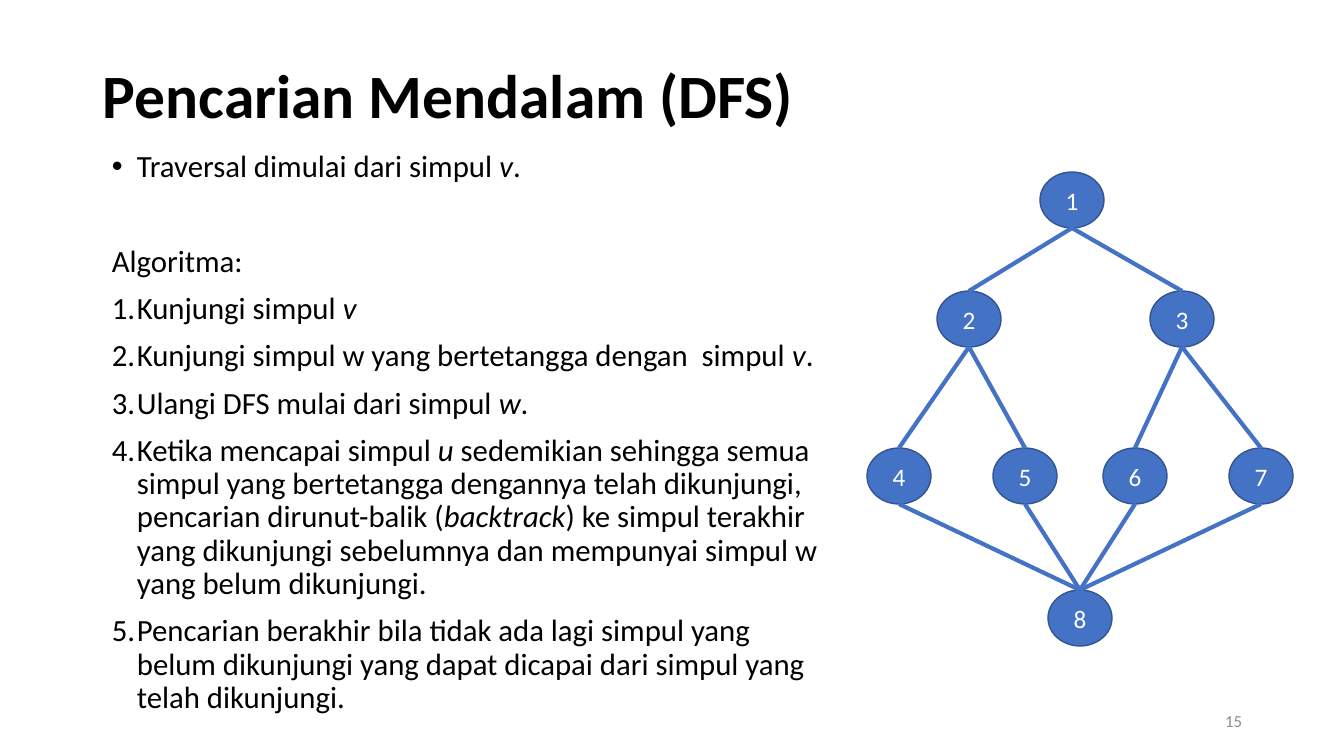
"""Builds the slide on depth-first search."""
from lxml.etree import SubElement
from pptx import Presentation
from pptx.dml.color import RGBColor
from pptx.enum.shapes import MSO_CONNECTOR as Conn, MSO_SHAPE as Form
from pptx.enum.text import MSO_ANCHOR as Anchor, PP_ALIGN as Align
from pptx.oxml.ns import qn
from pptx.util import Pt

TITLE = "Pencarian Mendalam (DFS)"
PAGE = "15"
BODY = [
    ("dot", "Traversal dimulai dari simpul *v*."),
    ("head", "Algoritma:"),
    ("num", "Kunjungi simpul *v*"),
    ("num", "Kunjungi simpul w yang bertetangga dengan  simpul *v*."),
    ("num", "Ulangi DFS mulai dari simpul *w*."),
    ("num", "Ketika mencapai simpul *u* sedemikian sehingga semua simpul yang "
            "bertetangga dengannya telah dikunjungi, pencarian dirunut-balik "
            "(*backtrack*) ke simpul terakhir yang dikunjungi sebelumnya dan "
            "mempunyai simpul w yang belum dikunjungi."),
    ("num", "Pencarian berakhir bila tidak ada lagi simpul yang belum dikunjungi "
            "yang dapat dicapai dari simpul yang telah dikunjungi."),
]
ROWS = [
    (200, [1072]),
    (319, [969, 1182]),
    (476, [899, 1025, 1135, 1261]),
    (618, [1080]),
]
EDGES = [(2, 4), (2, 5), (3, 6), (3, 7), (1, 2), (1, 3),
         (6, 8), (7, 8), (4, 8), (5, 8)]
HUES = {"ink": "000000", "page": "8C8C8C", "node": "4472C4",
        "rim": "325491", "label": "FFFFFF"}
NODE_W, NODE_H = 64, 56
HANG = 25
GAPS = {"dot": 10, "head": 44, "num": 10}
MARKS = {"dot": ("a:buChar", {"char": "•"}),
         "num": ("a:buAutoNum", {"type": "arabicPeriod"})}
SCALE = 914400 / 100.8


def px(n):
    return round(n * SCALE)


def hue(name):
    return RGBColor.from_string(HUES[name])


def write(para, text, size, ink, **style):
    for i, part in enumerate(text.split("*")):
        if part:
            run = para.add_run()
            run.text = part
            looks = {"name": "Calibri", "size": Pt(size), "italic": i % 2 == 1}
            for key, val in (looks | style).items():
                setattr(run.font, key, val)
            run.font.color.rgb = hue(ink)


def add_box(slide, left, top, width, height, anchor):
    box = slide.shapes.add_textbox(px(left), px(top), px(width), px(height))
    frame = box.text_frame
    frame.word_wrap = True
    frame.vertical_anchor = anchor
    return frame


def add_body(slide):
    frame = add_box(slide, 102, 146, 728, 583, Anchor.TOP)
    for i, (kind, text) in enumerate(BODY):
        para = frame.add_paragraph() if i else frame.paragraphs[0]
        para.line_spacing = 0.9
        para.space_before = Pt(GAPS[kind])
        if kind in MARKS:
            props = para._p.get_or_add_pPr()
            props.set("marL", str(px(HANG)))
            props.set("indent", str(-px(HANG)))
            SubElement(props, qn("a:buFont")).set(
                "typeface", "Arial" if kind == "dot" else "Calibri")
            tag, attrs = MARKS[kind]
            SubElement(props, qn(tag), attrs)
        write(para, text, 22, "ink")


def add_node(slide, label, x, y):
    node = slide.shapes.add_shape(Form.OVAL, px(x - NODE_W / 2), px(y - NODE_H / 2),
                                  px(NODE_W), px(NODE_H))
    node.shadow.inherit = False
    node.fill.solid()
    node.fill.fore_color.rgb = hue("node")
    node.line.color.rgb = hue("rim")
    node.line.width = Pt(1)
    frame = node.text_frame
    frame.vertical_anchor = Anchor.MIDDLE
    frame.paragraphs[0].alignment = Align.CENTER
    write(frame.paragraphs[0], label, 18, "label")
    return node


def add_edge(slide, start, end):
    edge = slide.shapes.add_connector(
        Conn.STRAIGHT, start.left + start.width // 2, start.top + start.height,
        end.left + end.width // 2, end.top)
    edge.end_connect(end, 0)
    edge.line.color.rgb = hue("node")
    edge.line.width = Pt(3)
    SubElement(edge._element.spPr, qn("a:effectLst"))


def main():
    deck = Presentation()
    deck.slide_width, deck.slide_height = px(1344), px(756)
    slide = deck.slides.add_slide(deck.slide_layouts[6])

    title = add_box(slide, 93, 26, 1159, 146, Anchor.MIDDLE).paragraphs[0]
    title.line_spacing = 0.9
    write(title, TITLE, 44, "ink", bold=True)
    add_body(slide)
    page = add_box(slide, 950, 701, 302, 40, Anchor.MIDDLE).paragraphs[0]
    page.alignment = Align.RIGHT
    write(page, PAGE, 12, "page")

    spots = [(x, y) for y, row in ROWS for x in row]
    nodes = {n: add_node(slide, str(n), x, y)
             for n, (x, y) in enumerate(spots, 1)}
    for start, end in EDGES:
        add_edge(slide, nodes[start], nodes[end])
    deck.save("out.pptx")


if __name__ == "__main__":
    main()
